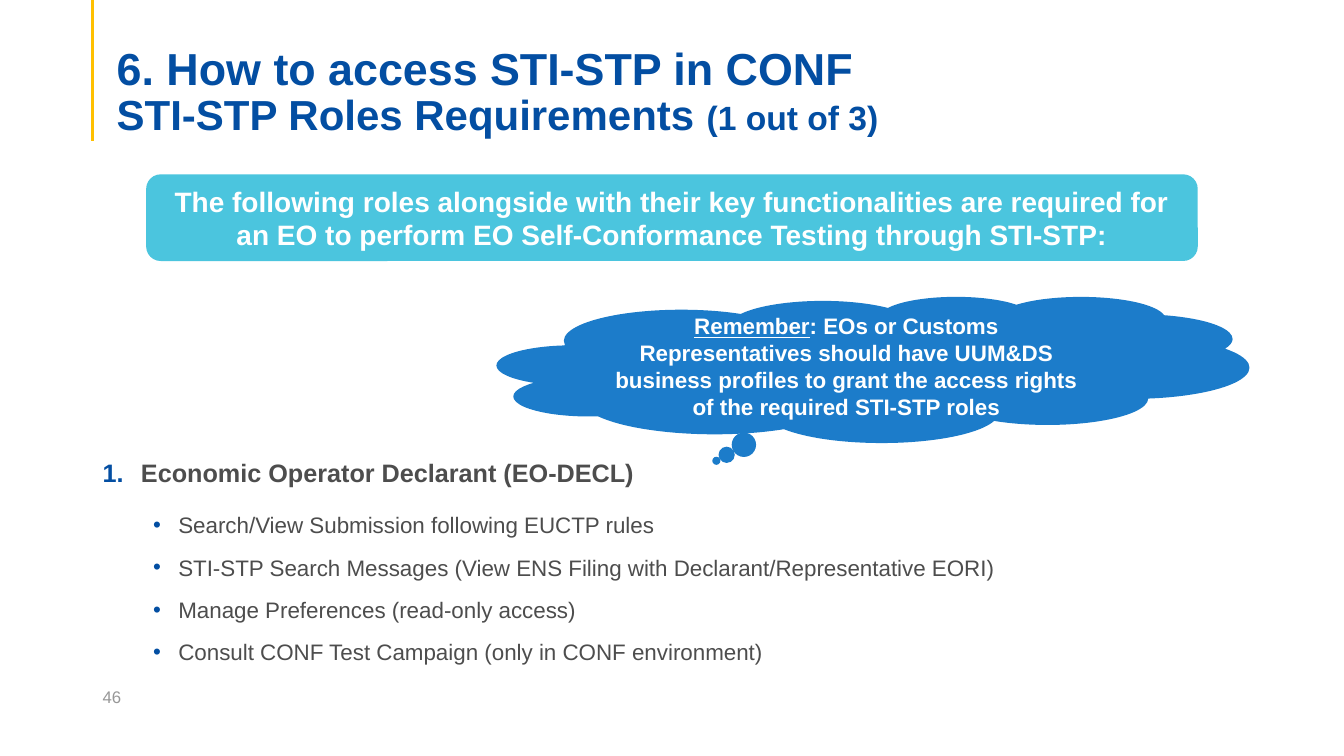
"""Build the slide on the roles needed to access STI-STP in CONF."""
from dataclasses import dataclass
from typing import Optional

from lxml.etree import SubElement
from pptx import Presentation
from pptx.dml.color import RGBColor
from pptx.enum.shapes import MSO_CONNECTOR, MSO_SHAPE
from pptx.enum.text import MSO_ANCHOR as Anchor, PP_ALIGN as Align
from pptx.oxml.ns import qn
from pptx.util import Inches, Pt

FONT = "Arial"
COLORS = {
    "white": "FFFFFF",
    "navy": "034EA2",
    "blue": "1C7CCA",
    "aqua": "4BC5DE",
    "gold": "FFC000",
    "text": "4D4D4D",
    "number": "979797",
}


@dataclass(frozen=True)
class Span:
    text: str
    size: float
    color: str
    bold: bool = False
    underline: bool = False


@dataclass(frozen=True)
class Bullet:
    tag: str
    attribute: str
    value: str
    level: int
    margin: float
    hanging: float


@dataclass(frozen=True)
class Line:
    spans: tuple[Span, ...]
    align: Align = Align.LEFT
    spacing: float = 1.0
    before: float = 0
    after: float = 0
    bullet: Optional[Bullet] = None


@dataclass(frozen=True)
class Block:
    left: float
    top: float
    width: float
    height: float
    lines: tuple[Line, ...]
    anchor: Anchor = Anchor.TOP
    bottom_inset: float = 0.05
    outline: Optional[MSO_SHAPE] = None
    fill: str = "white"


NUMBERED = Bullet("a:buAutoNum", "type", "arabicPeriod", 0, 0.38, 0.38)
DOTTED = Bullet("a:buChar", "char", "•", 1, 0.75, 0.25)

FUNCTIONALITIES = (
    "Search/View Submission following EUCTP rules",
    "STI-STP Search Messages (View ENS Filing with Declarant/Representative EORI)",
    "Manage Preferences (read-only access)",
    "Consult CONF Test Campaign (only in CONF environment)",
)

BLOCKS = (
    Block(1.45, 1.73, 10.43, 0.86, (
        Line((Span("The following roles alongside with their key functionalities are "
                   "required for an EO to perform EO Self-Conformance Testing through "
                   "STI-STP:", 20, "white", True),), Align.CENTER),
    ), Anchor.MIDDLE, outline=MSO_SHAPE.ROUNDED_RECTANGLE, fill="aqua"),
    Block(0.92, 6.71, 3, 0.4, (Line((Span("46", 12, "number"),)),), Anchor.MIDDLE),
    Block(1.06, 0.53, 11.5, 0.86, (
        Line((Span("6. How to access STI-STP in CONF", 32, "navy", True),), spacing=0.9),
        Line((Span("STI-STP Roles Requirements ", 30, "navy", True),
              Span("(1 out of 3)", 24, "navy", True)), spacing=0.9),
    ), Anchor.BOTTOM, bottom_inset=0),
    Block(0.92, 4.49, 11.89, 2.12, (
        Line((Span("Economic Operator Declarant (EO-DECL)", 18, "text", True),),
             after=12, bullet=NUMBERED),
        *(Line((Span(functionality, 16, "text"),), before=5, after=6, bullet=DOTTED)
          for functionality in FUNCTIONALITIES),
    )),
    Block(4.93, 2.94, 7.46, 1.45, (
        Line((Span("Remember", 16, "white", True, True),
              Span(": EOs or Customs Representatives should have UUM&DS business "
                   "profiles to grant the access rights of the required STI-STP roles",
                   16, "white", True)), Align.CENTER),
    ), Anchor.MIDDLE, outline=MSO_SHAPE.CLOUD_CALLOUT, fill="blue"),
)


def rgb(name: str) -> RGBColor:
    return RGBColor.from_string(COLORS[name])


def add_bullet(paragraph, bullet: Bullet) -> None:
    paragraph.level = bullet.level
    properties = paragraph._p.get_or_add_pPr()
    properties.set("marL", str(Inches(bullet.margin)))
    properties.set("indent", str(-Inches(bullet.hanging)))
    tint = SubElement(properties, qn("a:buClr"))
    SubElement(tint, qn("a:srgbClr"), val=COLORS["navy"])
    SubElement(properties, qn("a:buFont"), typeface=FONT)
    SubElement(properties, qn(bullet.tag)).set(bullet.attribute, bullet.value)


def write_line(paragraph, line: Line) -> None:
    if line.bullet:
        add_bullet(paragraph, line.bullet)
    paragraph.alignment = line.align
    paragraph.line_spacing = line.spacing
    paragraph.space_before = Pt(line.before)
    paragraph.space_after = Pt(line.after)
    for span in line.spans:
        run = paragraph.add_run()
        run.text = span.text
        run.font.name = FONT
        run.font.size = Pt(span.size)
        run.font.bold = span.bold
        run.font.underline = span.underline
        run.font.color.rgb = rgb(span.color)


def draw_block(slide, block: Block) -> None:
    bounds = [Inches(n) for n in (block.left, block.top, block.width, block.height)]
    if block.outline is None:
        holder = slide.shapes.add_textbox(*bounds)
    else:
        holder = slide.shapes.add_shape(block.outline, *bounds)
        holder.shadow.inherit = False
        holder.fill.solid()
        holder.fill.fore_color.rgb = rgb(block.fill)
        holder.line.fill.background()
    frame = holder.text_frame
    frame.word_wrap = True
    frame.vertical_anchor = block.anchor
    frame.margin_bottom = Inches(block.bottom_inset)
    for index, line in enumerate(block.lines):
        write_line(frame.add_paragraph() if index else frame.paragraphs[0], line)


def draw_accent(slide) -> None:
    accent = slide.shapes.add_connector(
        MSO_CONNECTOR.STRAIGHT, Inches(0.92), Inches(0), Inches(0.92), Inches(1.4))
    accent.line.color.rgb = rgb("gold")
    accent.line.width = Pt(2.25)
    SubElement(accent._element.spPr, qn("a:effectLst"))


def main() -> None:
    deck = Presentation()
    deck.slide_width, deck.slide_height = Inches(13.33), Inches(7.5)
    slide = deck.slides.add_slide(deck.slide_layouts[6])
    draw_accent(slide)
    for block in BLOCKS:
        draw_block(slide, block)
    deck.save("out.pptx")


if __name__ == "__main__":
    main()
